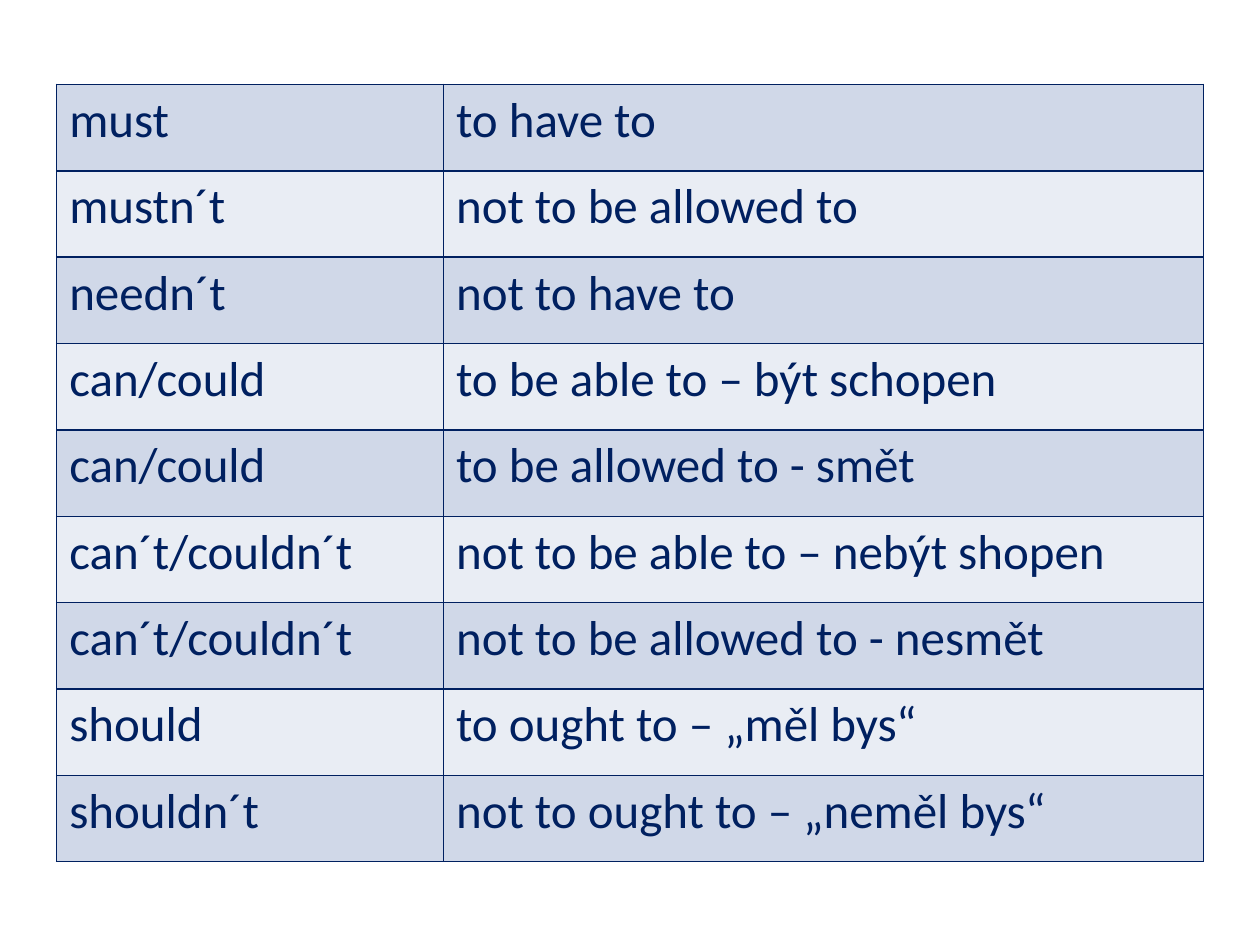
from lxml import etree
from pptx import Presentation, util as u
from pptx.dml.color import RGBColor
from pptx.oxml import ns

NAVY = RGBColor(0x00, 0x20, 0x60)
BANDS = (RGBColor(0xD0, 0xD8, 0xE8), RGBColor(0xE9, 0xED, 0xF4))

MODALS = [
    ("must", "to have to"),
    ("mustn´t", "not to be allowed to"),
    ("needn´t", "not to have to"),
    ("can/could", "to be able to – být schopen"),
    ("can/could", "to be allowed to - smět"),
    ("can´t/couldn´t", "not to be able to – nebýt shopen"),
    ("can´t/couldn´t", "not to be allowed to - nesmět"),
    ("should", "to ought to – „měl bys“"),
    ("shouldn´t", "not to ought to – „neměl bys“"),
]


class SlideBuilder:
    font_name = "Calibri"
    font_size = u.Pt(28)
    ink = NAVY
    border_width = u.Pt(1)

    def __init__(self, slide):
        self.slide = slide

    def borders(self, cell):
        properties = cell._tc.get_or_add_tcPr()
        for side in ("lnL", "lnR", "lnT", "lnB"):
            border = etree.SubElement(
                properties, ns.qn(f"a:{side}"), w=str(self.border_width)
            )
            fill = etree.SubElement(border, ns.qn("a:solidFill"))
            etree.SubElement(fill, ns.qn("a:srgbClr"), val=str(self.ink))

    def cell(self, cell, wording, band):
        self.borders(cell)
        cell.fill.solid()
        cell.fill.fore_color.rgb = band
        run = cell.text_frame.paragraphs[0].add_run()
        run.text = wording
        run.font.name = self.font_name
        run.font.size = self.font_size
        run.font.color.rgb = self.ink

    def table(self, entries, left, top, widths, height):
        grid = self.slide.shapes.add_table(
            len(entries), len(widths), left, top, sum(widths), height
        ).table
        grid.first_row = False
        for column, width in zip(grid.columns, widths):
            column.width = width
        for index, (row, wordings) in enumerate(zip(grid.rows, entries)):
            for cell, wording in zip(row.cells, wordings):
                self.cell(cell, wording, BANDS[index % 2])


def main():
    deck = Presentation()
    deck.slide_width, deck.slide_height = u.Inches(10), u.Inches(7.5)
    builder = SlideBuilder(deck.slides.add_slide(deck.slide_layouts[6]))
    builder.table(
        MODALS,
        u.Inches(0.45),
        u.Inches(0.67),
        (u.Inches(3.07), u.Inches(6.03)),
        u.Inches(6.17),
    )
    deck.save("out.pptx")


if __name__ == "__main__":
    main()
